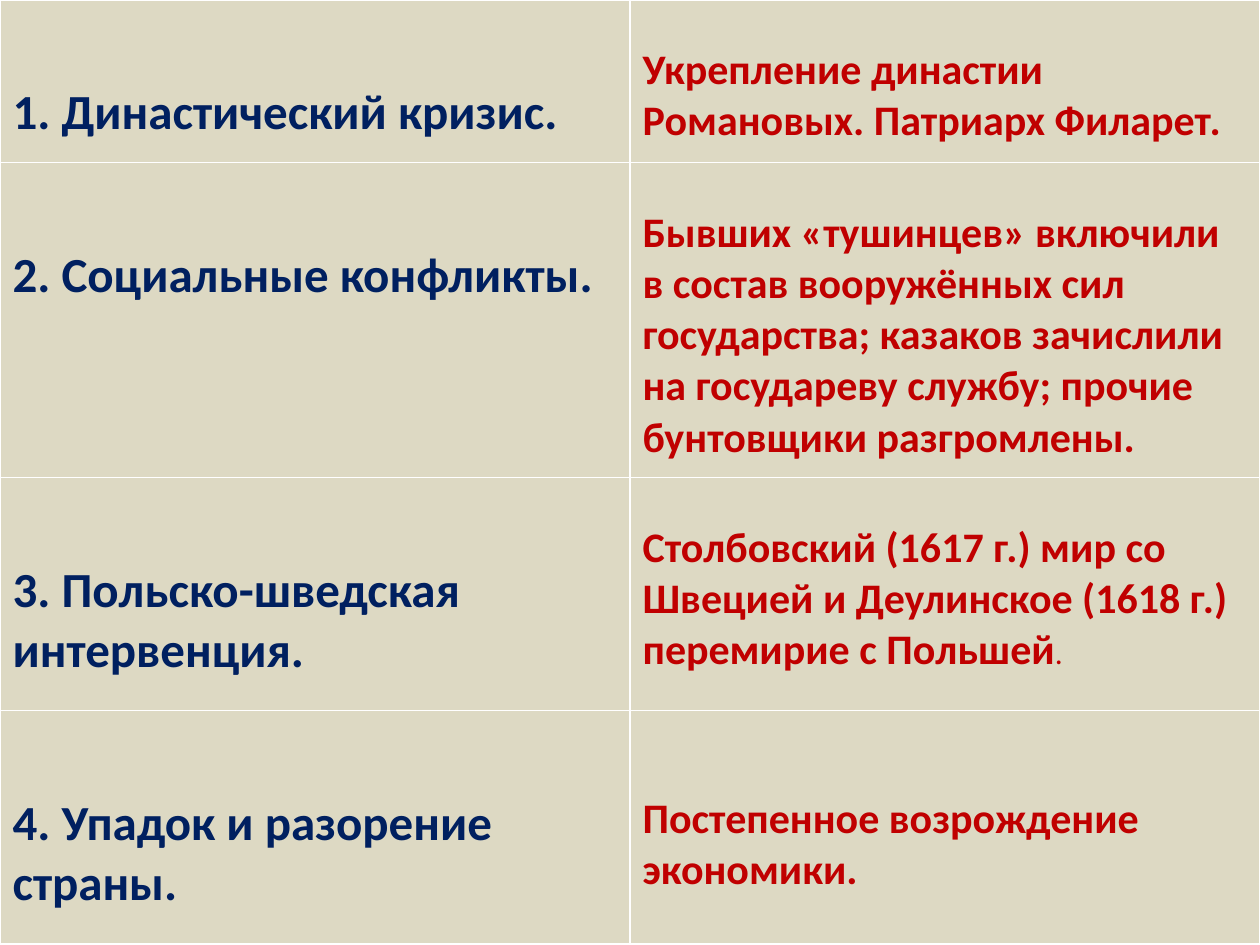
"""Build a slide pairing the problems of the Time of Troubles with their outcomes."""
from pptx import Presentation
from pptx.dml.color import RGBColor
from pptx.util import Inches, Pt

NAVY = RGBColor(0x00, 0x20, 0x60)
RED = RGBColor(0xC0, 0x00, 0x00)
SAND = RGBColor(0xDD, 0xD9, 0xC3)

WIDTH, HEIGHT = Inches(10), Inches(7.5)
PADDING, LINE_GAP = 0.05, 0.305
FONT = "Calibri"

# Row height, problem, outcome, lines of space above the outcome, closing mark
ROWS = [
    (1.29, "1. Династический кризис.",
     "Укрепление династии Романовых. Патриарх Филарет.", 1, ""),
    (2.5, "2. Социальные конфликты.",
     "Бывших «тушинцев» включили в состав вооружённых сил государства; "
     "казаков зачислили на государеву службу; прочие бунтовщики разгромлены.", 1, ""),
    (1.85, "3. Польско-шведская интервенция.",
     "Столбовский (1617 г.) мир со Швецией и Деулинское (1618 г.) "
     "перемирие с Польшей", 1, "."),
    (1.85, "4. Упадок и разорение страны.",
     "Постепенное возрождение экономики.", 2, ""),
]


def fill_cell(cell, text, size, color, gap_lines):
    cell.fill.solid()
    cell.fill.fore_color.rgb = SAND
    cell.margin_top = Inches(PADDING + gap_lines * LINE_GAP)
    paragraph = cell.text_frame.paragraphs[0]
    run = paragraph.add_run()
    run.text = text
    style_run(run, size, color, True)
    return paragraph


def style_run(run, size, color, bold):
    run.font.name = FONT
    run.font.size = Pt(size)
    run.font.bold = bold
    run.font.color.rgb = color


def main():
    deck = Presentation()
    deck.slide_width, deck.slide_height = WIDTH, HEIGHT
    slide = deck.slides.add_slide(deck.slide_layouts[6])
    table = slide.shapes.add_table(len(ROWS), 2, 0, 0, WIDTH, HEIGHT).table
    table.horz_banding = False

    for row, (height, problem, outcome, gap_lines, mark) in zip(table.rows, ROWS):
        row.height = Inches(height)
        problem_cell, outcome_cell = row.cells
        fill_cell(problem_cell, problem, 28, NAVY, 2)
        paragraph = fill_cell(outcome_cell, outcome, 24, RED, gap_lines)
        if mark:
            closing = paragraph.add_run()
            closing.text = mark
            style_run(closing, 18, RED, False)

    deck.save("out.pptx")


if __name__ == "__main__":
    main()
